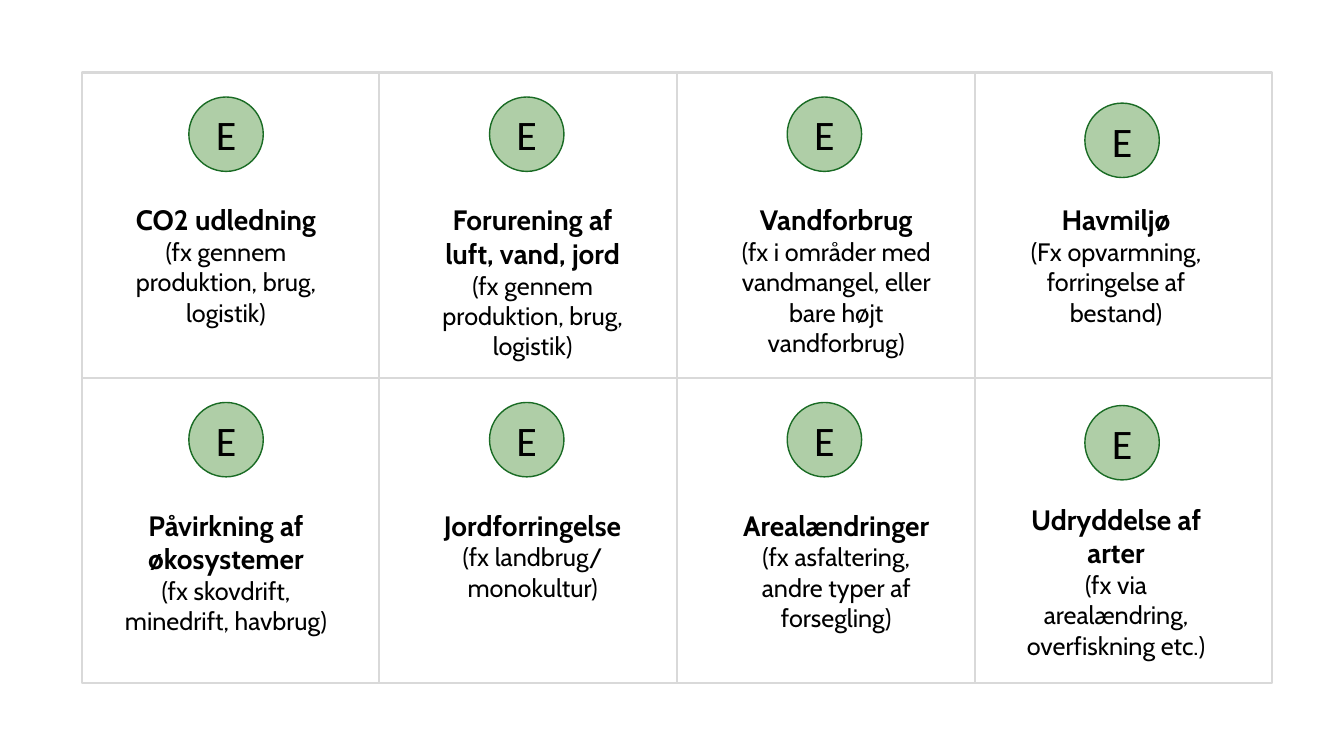
from dataclasses import dataclass

from pptx import Presentation, util as u
from pptx.dml.color import RGBColor
from pptx.enum import shapes, text


@dataclass(frozen=True)
class Theme:
    grid_line: str = "D9D9D9"
    badge_fill: str = "AFCEA7"
    badge_line: str = "196B24"
    ink: str = "000000"
    body_font: str = "Cabin"
    badge_font: str = "Calibri"
    title_size: int = 20
    detail_size: int = 18
    badge_size: int = 30


@dataclass(frozen=True)
class Grid:
    left: float = 0.81
    top: float = 0.72
    column: float = 11.81 / 4
    row: float = 6.06 / 2

    def box(self, column: float, row: float, columns: float, rows: float) -> tuple:
        return (
            u.Inches(self.left + column * self.column),
            u.Inches(self.top + row * self.row),
            u.Inches(columns * self.column),
            u.Inches(rows * self.row),
        )


@dataclass(frozen=True)
class Topic:
    title: str
    details: tuple[str, ...]
    text_top: float = 0.41
    text_height: float = 0.55
    badge_top: float = 0.08


THEME = Theme()
GRID = Grid()
COLUMNS = 4
TEXT_LEFTS = (0.10, 0.13, 0.15, 0.09)
TEXT_WIDTH = 0.77
BADGE_LEFTS = (0.36, 0.37, 0.37, 0.37)
BADGE_DIAMETER = 0.25

TOPICS = (
    Topic("CO2 udledning", ("(fx gennem produktion, brug, logistik)",)),
    Topic("Forurening af luft, vand, jord", ("(fx gennem produktion, brug, logistik)",)),
    Topic("Vandforbrug", ("(fx i områder med vandmangel, eller bare højt vandforbrug)",)),
    Topic("Havmiljø", ("(Fx opvarmning, forringelse af bestand)",),
          text_height=0.45, badge_top=0.10),
    Topic("Påvirkning af økosystemer", ("(fx skovdrift, minedrift, havbrug)",)),
    Topic("Jordforringelse", ("(fx landbrug/", "monokultur)"), text_height=0.45),
    Topic("Arealændringer", ("(fx asfaltering, andre typer af forsegling)",)),
    Topic("Udryddelse af arter", ("(fx via arealændring, overfiskning etc.)",),
          text_top=0.39, badge_top=0.09),
)


def write(paragraph, content: str, *, size: int, font: str, bold: bool = False) -> None:
    paragraph.alignment = text.PP_ALIGN.CENTER
    run = paragraph.add_run()
    run.text = content
    run.font.size = u.Pt(size)
    run.font.name = font
    run.font.bold = bold
    run.font.color.rgb = RGBColor.from_string(THEME.ink)


def add_outlined(slide, kind, box: tuple, *, line: str, width: float, fill: str = ""):
    shape = slide.shapes.add_shape(kind, *box)
    shape.shadow.inherit = False
    shape.line.color.rgb = RGBColor.from_string(line)
    shape.line.width = u.Pt(width)
    if fill:
        shape.fill.solid()
        shape.fill.fore_color.rgb = RGBColor.from_string(fill)
    else:
        shape.fill.background()
    return shape


def add_cell(slide, column: int, row: int) -> None:
    add_outlined(slide, shapes.MSO_SHAPE.RECTANGLE, GRID.box(column, row, 1, 1),
                 line=THEME.grid_line, width=1.5)


def add_topic_text(slide, topic: Topic, column: int, row: int) -> None:
    box = GRID.box(column + TEXT_LEFTS[column], row + topic.text_top,
                   TEXT_WIDTH, topic.text_height)
    frame = slide.shapes.add_textbox(*box).text_frame
    frame.word_wrap = True
    frame.auto_size = text.MSO_AUTO_SIZE.SHAPE_TO_FIT_TEXT
    write(frame.paragraphs[0], topic.title,
          size=THEME.title_size, font=THEME.body_font, bold=True)
    for detail in topic.details:
        write(frame.add_paragraph(), detail,
              size=THEME.detail_size, font=THEME.body_font)


def add_badge(slide, topic: Topic, column: int, row: int) -> None:
    left, top, diameter, _ = GRID.box(column + BADGE_LEFTS[column],
                                      row + topic.badge_top, BADGE_DIAMETER, 0)
    shape = add_outlined(slide, shapes.MSO_SHAPE.OVAL, (left, top, diameter, diameter),
                         line=THEME.badge_line, width=1, fill=THEME.badge_fill)
    frame = shape.text_frame
    frame.margin_left = frame.margin_right = 0
    frame.margin_top = frame.margin_bottom = u.Inches(0.05)
    frame.vertical_anchor = text.MSO_ANCHOR.MIDDLE
    write(frame.paragraphs[0], "E", size=THEME.badge_size, font=THEME.badge_font)


def main() -> None:
    presentation = Presentation()
    presentation.slide_width = u.Inches(13.33)
    presentation.slide_height = u.Inches(7.5)
    slide = presentation.slides.add_slide(presentation.slide_layouts[6])
    for index, topic in enumerate(TOPICS):
        row, column = divmod(index, COLUMNS)
        add_cell(slide, column, row)
        add_topic_text(slide, topic, column, row)
        add_badge(slide, topic, column, row)
    presentation.save("out.pptx")


if __name__ == "__main__":
    main()
